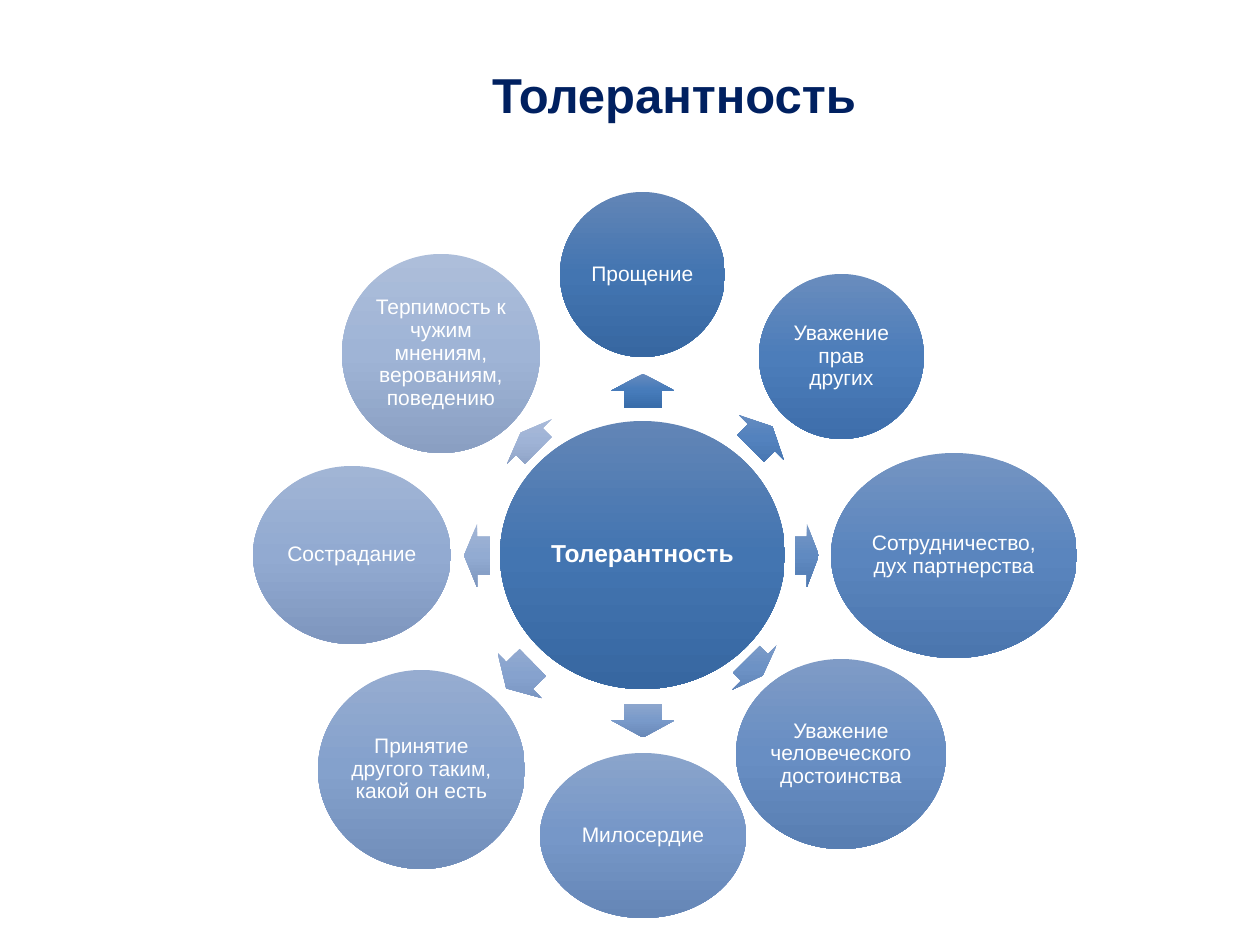
from copy import deepcopy
from dataclasses import dataclass

from pptx import Presentation
from pptx import util as u
from pptx.dml import color
from pptx.enum import shapes, text
from pptx.oxml import ns

EMU_PER_PX = u.Inches(1) / 126
FONT = "Arial"
WHITE = "FFFFFF"
NAVY = "002060"


@dataclass(frozen=True)
class Box:
    left: int
    top: int
    width: int
    height: int


@dataclass(frozen=True)
class Circle:
    label: str
    box: Box
    gradient: str
    size: int = 12
    bold: bool = False


@dataclass(frozen=True)
class Arrow:
    box: Box
    rotation: float
    gradient: str


CORE = Circle("Толерантность", Box(500, 421, 285, 268), "6285B6 4375B1 3767A1", 14, True)

RAYS = [
    (Arrow(Box(626, 359, 34, 63), 270, "668ABD 467BBA 396DAA"),
     Circle("Прощение", Box(560, 192, 165, 165), "6285B6 4375B1 3767A1")),
    (Arrow(Box(746, 406, 31, 63), 315, "6F91C1 5382BE 4473AE"),
     Circle("Уважение прав других", Box(759, 274, 165, 165), "698CBD 4C7DBA 3E6EAB")),
    (Arrow(Box(795, 524, 24, 63), 0, "7898C5 608AC1 507AB1"),
     Circle("Сотрудничество, дух партнерства", Box(831, 453, 246, 205), "7494C2 5A85BE 4B76AE")),
    (Arrow(Box(743, 636, 23, 63), 45, "829FC9 6D92C5 5C81B4"),
     Circle("Уважение человеческого достоинства", Box(736, 659, 210, 190), "7F9BC6 688EC3 587EB2")),
    (Arrow(Box(626, 689, 34, 63), 90, "8DA6CD 799ACA 6888B7"),
     Circle("Милосердие", Box(540, 753, 206, 165), "8AA4CB 7697C8 6586B6")),
    (Arrow(Box(501, 644, 37, 63), 135.8, "97ADD1 86A2CE 738FBB"),
     Circle("Принятие другого таким, какой он есть", Box(318, 670, 207, 199), "96ACD0 84A1CC 718EBA")),
    (Arrow(Box(464, 524, 26, 63), 180, "A2B5D5 92ABD2 7E97BE"),
     Circle("Сострадание", Box(253, 466, 198, 178), "A1B5D5 92AAD1 7E96BE")),
    (Arrow(Box(517, 410, 25, 63), 225, "ADBDDA 9FB3D6 8A9EC2"),
     Circle("Терпимость к чужим мнениям, верованиям, поведению", Box(342, 254, 198, 199),
            "ADBEDA 9FB4D6 8A9FC2")),
]


def px(length: int) -> int:
    return round(length * EMU_PER_PX)


def place(box: Box) -> tuple[int, int, int, int]:
    return px(box.left), px(box.top), px(box.width), px(box.height)


def rgb(value: str) -> color.RGBColor:
    return color.RGBColor.from_string(value)


def write(frame, wording: str, size: int, bold: bool, ink: str) -> None:
    frame.word_wrap = True
    frame.auto_size = text.MSO_AUTO_SIZE.NONE
    frame.vertical_anchor = text.MSO_ANCHOR.MIDDLE
    line = frame.paragraphs[0]
    line.alignment = text.PP_ALIGN.CENTER
    line.line_spacing = 0.9
    run = line.add_run()
    run.text = wording
    run.font.name = FONT
    run.font.size = u.Pt(size)
    run.font.bold = bold
    run.font.color.rgb = rgb(ink)


def add_shaded(slide, preset, box: Box, gradient: str):
    shape = slide.shapes.add_shape(preset, *place(box))
    shape.shadow.inherit = False
    shape.line.fill.background()
    shape.fill.gradient()
    shape.fill.gradient_angle = 270
    shading = shape.element.spPr.find(ns.qn("a:gradFill"))
    shading.set("rotWithShape", "0")
    stops = shading.find(ns.qn("a:gsLst"))
    stops.append(deepcopy(stops[0]))
    for stop, position, tone in zip(shape.fill.gradient_stops, (0, 0.5, 1), gradient.split()):
        stop.position = position
        stop.color.rgb = rgb(tone)
    return shape


def draw_circle(slide, circle: Circle) -> None:
    shape = add_shaded(slide, shapes.MSO_SHAPE.OVAL, circle.box, circle.gradient)
    frame = shape.text_frame
    frame.margin_left = frame.margin_right = px(2)
    frame.margin_top = frame.margin_bottom = px(2)
    write(frame, circle.label, circle.size, circle.bold, WHITE)


def draw_arrow(slide, arrow: Arrow) -> None:
    shape = add_shaded(slide, shapes.MSO_SHAPE.RIGHT_ARROW, arrow.box, arrow.gradient)
    shape.adjustments[0] = 0.6
    shape.adjustments[1] = 0.5
    shape.rotation = arrow.rotation


def main() -> None:
    deck = Presentation()
    deck.slide_width, deck.slide_height = px(1260), px(945)
    slide = deck.slides.add_slide(deck.slide_layouts[5])

    heading = slide.shapes.title
    heading.left, heading.top, heading.width, heading.height = place(Box(154, 45, 1040, 106))
    write(heading.text_frame, "Толерантность", 28, True, NAVY)

    draw_circle(slide, CORE)
    for arrow, circle in RAYS:
        draw_arrow(slide, arrow)
        draw_circle(slide, circle)

    deck.save("out.pptx")


if __name__ == "__main__":
    main()
